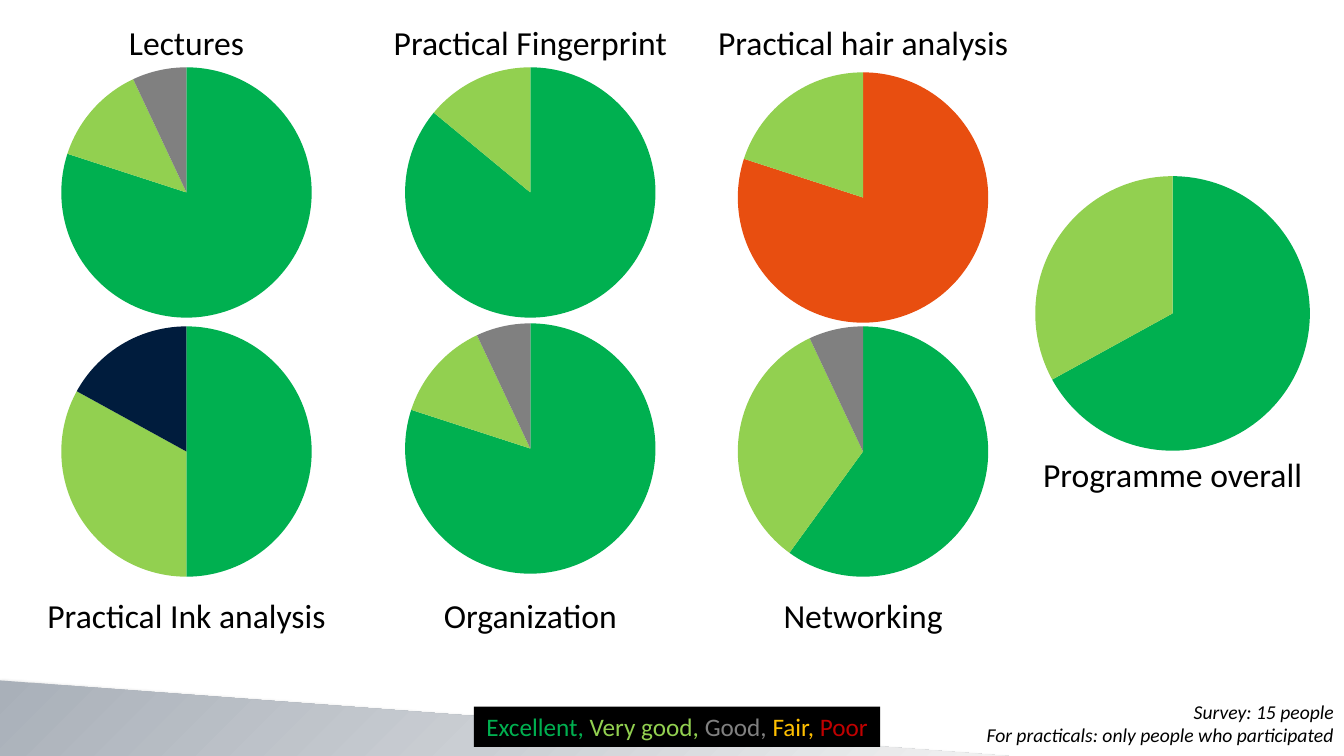
from copy import deepcopy

from lxml.etree import SubElement
from pptx import Presentation
from pptx.chart.data import CategoryChartData
from pptx.dml.color import RGBColor
from pptx.enum.chart import XL_CHART_TYPE as Chart
from pptx.enum.shapes import MSO_SHAPE as Shape
from pptx.enum.text import MSO_ANCHOR as Anchor, PP_ALIGN as Align
from pptx.oxml.ns import qn
from pptx.util import Inches, Pt

EXCELLENT, VERY_GOOD, GOOD = "00B050", "92D050", "808080"
FAIR, POOR = "FFC000", "C00000"
NAVY, ORANGE, SALMON, SKY = "001C3D", "E84E10", "F3A687", "7FD0ED"

LABEL_W, LABEL_H = 4.21, 0.83
PIE_W, PIE_H = 2.83, 2.76
COLUMN_CENTERS = (1.85, 5.26, 8.56)
TOP_LABEL, BOTTOM_LABEL = 0.17, 5.85

# Label, pie top, values, colours that differ from the scale
TOP_ROW = [
    ("Lectures", 0.53, (80, 13, 7, 0, 0), {2: GOOD}),
    ("Practical Fingerprint", 0.53, (86, 14, 0, 0, 0), {}),
    ("Practical hair analysis", 0.58, (80, 20, 0, 0, 0), {0: ORANGE}),
]
BOTTOM_ROW = [
    ("Practical Ink analysis", 3.1, (50, 33, 17, 0, 0), {}),
    ("Organization", 3.07, (80, 13, 7, 0, 0), {2: GOOD}),
    ("Networking", 3.1, (60, 33, 7, 0, 0), {2: GOOD}),
]


def rgb(color):
    return RGBColor.from_string(color)


def box(left, top, width, height):
    return [Inches(v) for v in (left, top, width, height)]


def write(tf, paragraphs, size, align=Align.CENTER, italic=False, wrap=True,
          anchor=Anchor.TOP):
    """Fill a text frame; each paragraph is a list of (text, colour) runs."""
    tf.word_wrap = wrap
    tf.vertical_anchor = anchor
    for i, runs in enumerate(paragraphs):
        p = tf.add_paragraph() if i else tf.paragraphs[0]
        p.alignment = align
        for text, color in runs:
            r = p.add_run()
            r.text = text
            r.font.name, r.font.size, r.font.italic = "Calibri", Pt(size), italic
            r.font.color.rgb = rgb(color)


def add_label(slide, text, center, top):
    s = slide.shapes.add_textbox(*box(center - LABEL_W / 2, top, LABEL_W, LABEL_H))
    write(s.text_frame, [[(text, "000000")]], 24)


def add_pie(slide, left, top, width, height, values, changes):
    data = CategoryChartData()
    data.categories = ["1", "2", "3", "4", "5"]
    data.add_series("Series 1", values)
    chart = slide.shapes.add_chart(
        Chart.PIE, *box(left, top, width, height), data).chart
    chart.has_title = chart.has_legend = False
    chart.font.name, chart.font.size = "Cambria", Pt(10)
    chart.font.color.rgb = rgb(NAVY)
    plot = chart.plots[0]
    plot.vary_by_categories = True
    for i, color in enumerate((EXCELLENT, VERY_GOOD, NAVY, SALMON, SKY)):
        point = plot.series[0].points[i].format
        point.fill.solid()
        point.fill.fore_color.rgb = rgb(changes.get(i, color))
        point.line.fill.background()


def add_pie_row(slide, row, label_top):
    for center, (label, pie_top, values, changes) in zip(COLUMN_CENTERS, row):
        add_label(slide, label, center, label_top)
        add_pie(slide, center - PIE_W / 2, pie_top, PIE_W, PIE_H, values, changes)


def add_overall(slide, left, top, width, height):
    add_label(slide, "Programme overall", left + width / 2, top + height - 0.16)
    add_pie(slide, left, top, width, height, (67, 33, 0, 0, 0), {})


def add_corner(slide, left, top, width, height):
    """Draw the grey wedge with a gradient and a soft shadow."""
    s = slide.shapes.add_shape(Shape.RIGHT_TRIANGLE, *box(left, top, width, height))
    s.line.fill.background()
    s.fill.gradient()
    s.fill.gradient_angle = 315
    first = s._element.spPr.find(".//" + qn("a:gs"))
    first.addnext(deepcopy(first))
    stops = zip(s.fill.gradient_stops, (0, 0.5, 1), ("A9B0B9", "CACED3", "F2F2F2"))
    for stop, position, color in stops:
        stop.position = position
        stop.color.rgb = rgb(color)
    s.shadow.inherit = False
    shadow = SubElement(s._element.spPr.find(qn("a:effectLst")), qn("a:outerShdw"),
                        blurRad=str(Pt(4)), dist=str(Pt(2)), dir="5400000")
    black = SubElement(shadow, qn("a:srgbClr"), val="000000")
    SubElement(black, qn("a:alpha"), val="46000")


def add_rating_key(slide, left, top, width, height):
    s = slide.shapes.add_shape(Shape.RECTANGLE, *box(left, top, width, height))
    s.shadow.inherit = False
    s.fill.solid()
    s.fill.fore_color.rgb = rgb("000000")
    s.line.fill.background()
    ratings = [("Excellent, ", EXCELLENT), ("Very good, ", VERY_GOOD),
               ("Good, ", GOOD), ("Fair, ", FAIR), ("Poor", POOR)]
    write(s.text_frame, [ratings], 18, wrap=False, anchor=Anchor.MIDDLE)


def add_survey_note(slide, left, top, width, height):
    s = slide.shapes.add_textbox(*box(left, top, width, height))
    lines = ("Survey: 15 people", "For practicals: only people who participated")
    write(s.text_frame, [[(line, "000000")] for line in lines], 14,
          align=Align.RIGHT, italic=True, wrap=False)


def main():
    prs = Presentation()
    prs.slide_width, prs.slide_height = Inches(13.33), Inches(7.5)
    slide = prs.slides.add_slide(prs.slide_layouts[6])
    add_corner(slide, 0, 6.75, 10, 0.75)
    add_rating_key(slide, 4.7, 7.01, 4.03, 0.4)
    add_survey_note(slide, 9.65, 6.89, 3.68, 0.57)
    add_pie_row(slide, TOP_ROW, TOP_LABEL)
    add_pie_row(slide, BOTTOM_ROW, BOTTOM_LABEL)
    add_overall(slide, 9.13, 1.61, 5, 3)
    prs.save("out.pptx")


if __name__ == "__main__":
    main()
